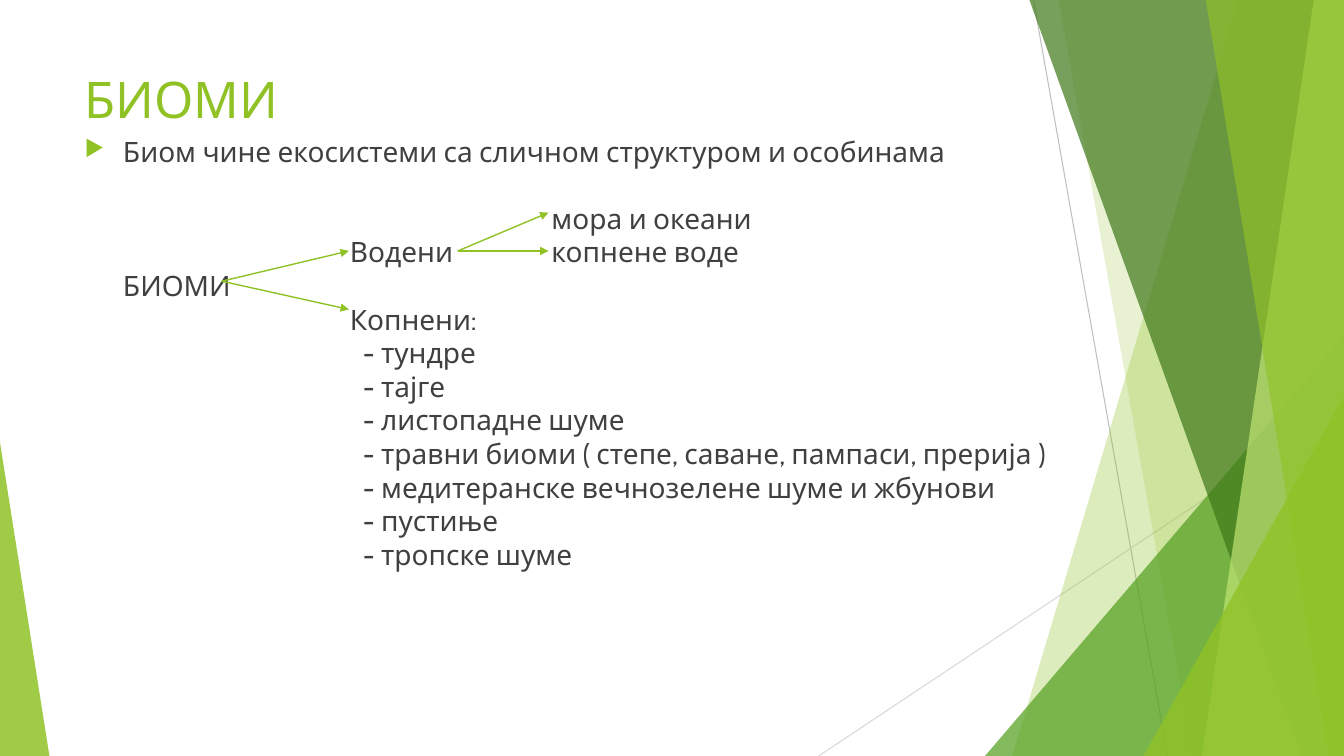
from lxml import etree
from pptx import Presentation, util as u
from pptx.dml.color import RGBColor
from pptx.enum import shapes, text
from pptx.oxml.ns import qn

WIDE, HIGH = 13.33, 7.5
ROW = 24  # points between lines of text
LEFT, TOP = 0.84, 1.33  # start of the text grid
INDENT, KIND, ITEM, WATER = 0.38, 2.63, 2.76, 4.63  # text columns from LEFT
INK = {
    "lime": "90C226", "leaf": "54A021", "moss": "3F7819", "pale": "C0E474",
    "text": "404040", "grey": "BFBFBF", "mist": "D9D9D9",
}


def color(name):
    return RGBColor.from_string(INK[name])


def paint(shape, name, alpha):
    """Fill with a see-through colour, without line or shadow."""
    shape.shadow.inherit = False
    shape.line.fill.background()
    shape.fill.solid()
    shape.fill.fore_color.rgb = color(name)
    tint = shape.fill._xPr.find(".//" + qn("a:srgbClr"))
    etree.SubElement(tint, qn("a:alpha")).set("val", str(alpha * 1000))


def band(slide, upper, lower, name, alpha):
    """Draw a panel from a slanted left edge to the right side."""
    pen = slide.shapes.build_freeform(
        round(upper * 100), 0, scale=u.Inches(0.01))
    ends = [(WIDE, 0), (WIDE, HIGH), (lower, HIGH)]
    pen.add_line_segments([(round(x * 100), round(y * 100)) for x, y in ends])
    paint(pen.convert_to_shape(), name, alpha)


def wedge(slide, left, top, width, tip, name, alpha):
    """Draw a triangle that stands on the bottom edge."""
    box = [u.Inches(n) for n in (left, top, width, HIGH - top)]
    shape = slide.shapes.add_shape(
        shapes.MSO_SHAPE.ISOSCELES_TRIANGLE, *box)
    shape.adjustments[0] = tip
    paint(shape, name, alpha)


def line(slide, start, end, name, weight, arrow=False):
    ends = [u.Inches(n) for n in (*start, *end)]
    rule = slide.shapes.add_connector(shapes.MSO_CONNECTOR.STRAIGHT, *ends)
    rule.line.color.rgb = color(name)
    rule.line.width = u.Pt(weight)
    if arrow:
        head = etree.SubElement(rule.line._get_or_add_ln(), qn("a:tailEnd"))
        head.set("type", "triangle")
    etree.SubElement(rule._element.spPr, qn("a:effectLst"))


def frame(slide, left, top, width, height):
    """Add an empty text box without insets."""
    box = [u.Inches(n) for n in (left, top, width, height)]
    area = slide.shapes.add_textbox(*box).text_frame
    area.word_wrap = True
    area.margin_left = area.margin_right = 0
    area.margin_top = area.margin_bottom = 0
    area.vertical_anchor = text.MSO_ANCHOR.TOP
    return area


def write(area, words, size=20, name="text", indent=0, skip=0,
          pitch=ROW, bullet=False):
    """Add a paragraph, leaving skip rows free above it."""
    para = area.paragraphs[0]
    if para.runs:
        para = area.add_paragraph()
    run = para.add_run()
    run.text = words
    run.font.name = "Cabin"
    run.font.size = u.Pt(size)
    run.font.color.rgb = color(name)
    para.space_before = u.Pt(skip * ROW)
    if pitch:
        para.line_spacing = u.Pt(pitch)
    props = para._p.get_or_add_pPr()
    props.set("marL", str(u.Inches(indent)))
    props.set("indent", str(-u.Inches(indent) if bullet else 0))
    if bullet:
        tint = etree.SubElement(props, qn("a:buClr"))
        etree.SubElement(tint, qn("a:srgbClr")).set("val", INK["lime"])
        etree.SubElement(props, qn("a:buSzPct")).set("val", "80000")
        etree.SubElement(props, qn("a:buChar")).set("char", "▶")


def decor(slide):
    line(slide, (10.25, 0), (11.58, HIGH), "grey", 0.75)
    line(slide, (WIDE, 4.03), (8.12, HIGH), "mist", 0.75)
    band(slide, 12.28, 10.04, "lime", 30)
    band(slide, 10.5, 11.83, "lime", 20)
    wedge(slide, 9.77, 3.33, 3.56, 1, "leaf", 72)
    band(slide, 10.21, 12.91, "moss", 70)
    band(slide, 13.03, 11.92, "pale", 70)
    band(slide, 11.96, 13.18, "lime", 65)
    wedge(slide, 11.34, 3.93, 1.99, 1, "lime", 80)
    wedge(slide, 0, 4.39, 0.49, 0, "lime", 85)


def words(slide):
    title = frame(slide, LEFT, 0.68, 9.2, 0.65)
    write(title, "БИОМИ", size=36, name="lime", pitch=None)

    body = frame(slide, LEFT, TOP, 9.64, 13 * ROW / 72)
    write(body, "Биом чине екосистеми са сличном структуром и особинама",
          indent=INDENT, bullet=True)
    write(body, "Водени", indent=KIND, skip=2)
    write(body, "БИОМИ", indent=INDENT)
    write(body, "Копнени:", indent=KIND)
    for item in (
        "тундре", "тајге", "листопадне шуме",
        "травни биоми ( степе, саване, пампаси, прерија )",
        "медитеранске вечнозелене шуме и жбунови",
        "пустиње", "тропске шуме",
    ):
        write(body, "- " + item, indent=ITEM)

    water = frame(slide, LEFT + WATER, TOP + 2 * ROW / 72, 3, 2 * ROW / 72)
    for item in ("мора и океани", "копнене воде"):
        write(water, item)


def arrows(slide):
    root, fork = (2.2, 2.79), (4.54, 2.49)
    for start, end in (
        (root, (3.46, 2.49)), (fork, (5.44, 2.11)),
        (fork, (5.44, 2.49)), (root, (3.46, 3.07)),
    ):
        line(slide, start, end, "lime", 1, arrow=True)


def main():
    deck = Presentation()
    deck.slide_width, deck.slide_height = u.Inches(WIDE), u.Inches(HIGH)
    slide = deck.slides.add_slide(deck.slide_layouts[6])
    decor(slide)
    words(slide)
    arrows(slide)
    deck.save("out.pptx")


if __name__ == "__main__":
    main()
